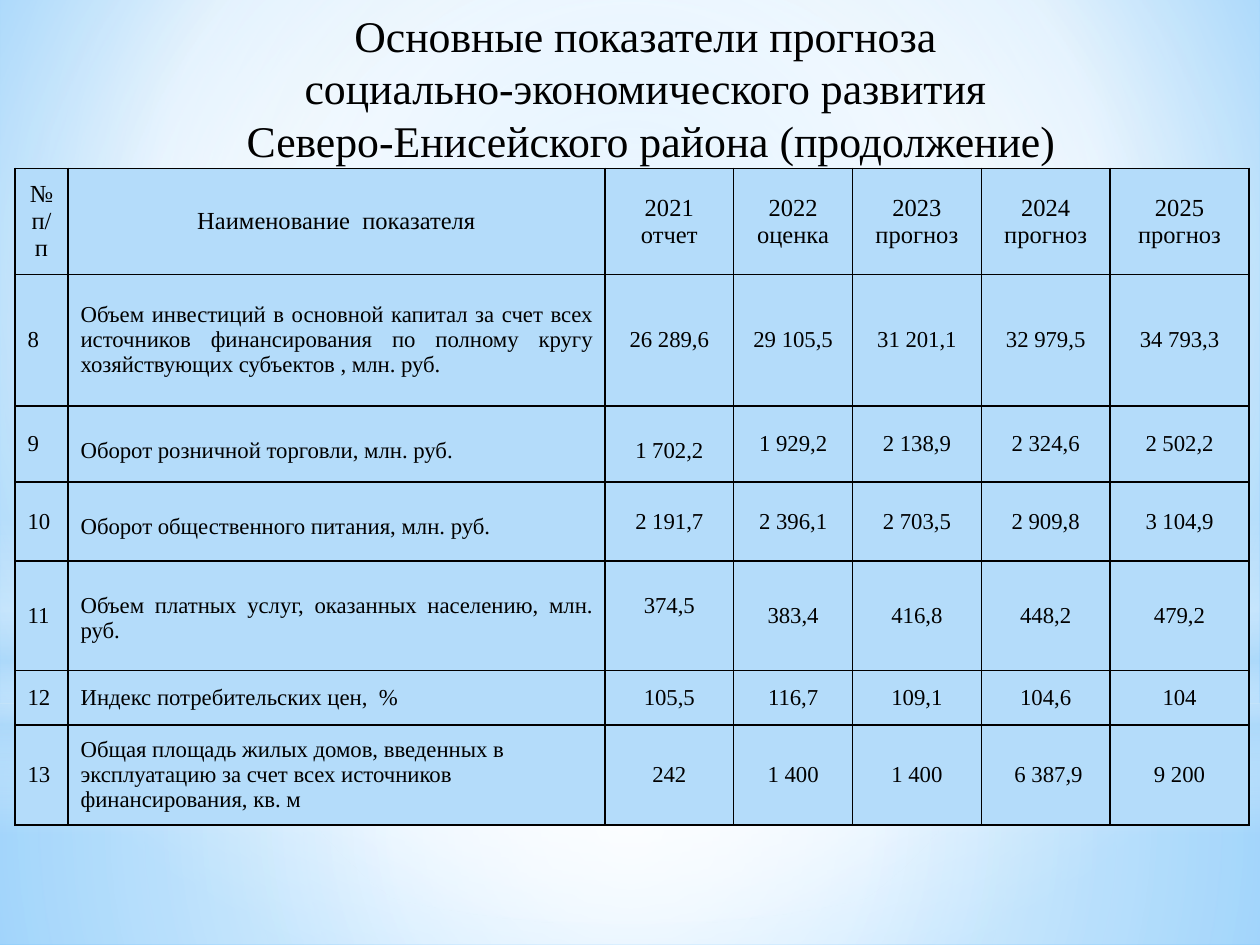
from lxml.etree import SubElement
from pptx import Presentation
from pptx.dml.color import RGBColor
from pptx.enum.shapes import MSO_SHAPE
from pptx.enum.text import MSO_ANCHOR, PP_ALIGN
from pptx.oxml.ns import qn
from pptx.util import Pt

FONT = "Times New Roman"
BLACK, WHITE, PALE_BLUE = "000000", "FFFFFF", "B4DCFA"
COLUMN_WIDTHS = [30.3, 306.8, 73.6, 67.9, 73.6, 73.6, 79.4]
ROW_HEIGHTS = [60.8, 74.9, 43.6, 45.2, 62.4, 31.3, 57]
MARGIN, LOWERED_MARGIN = 3.6, 18.6
CENTRE_FOCUS = (50, 50, 50, 50)
TITLE = [
    "Основные показатели прогноза ",
    "социально-экономического развития ",
    "Северо-Енисейского района (продолжение)",
]
HEADINGS = ["№ п/п", "Наименование  показателя", "2021 отчет", "2022 оценка",
            "2023 прогноз", "2024\nпрогноз", "2025 прогноз"]
INDICATORS = [
    ["8", "Объем инвестиций в основной капитал за счет всех источников финансирования "
     "по полному кругу хозяйствующих субъектов , млн. руб.",
     "26 289,6", "29 105,5", "31 201,1", "32 979,5", "34 793,3"],
    ["9", "Оборот розничной торговли, млн. руб.",
     "1 702,2", "1 929,2", "2 138,9", "2 324,6", "2 502,2"],
    ["10", "Оборот общественного питания, млн. руб.",
     "2 191,7", "2 396,1", "2 703,5", "2 909,8", "3 104,9"],
    ["11", "Объем платных услуг, оказанных населению, млн. руб.",
     "374,5", "383,4", "416,8", "448,2", "479,2"],
    ["12", "Индекс потребительских цен,  %",
     "105,5", "116,7", "109,1", "104,6", "104"],
    ["13", "Общая площадь жилых домов, введенных в эксплуатацию за счет всех источников "
     "финансирования, кв. м",
     "242", "1 400", "1 400", " 6 387,9", "9 200"],
]
JUSTIFIED = {"8", "11", "12"}
LOWERED = {("9", 1), ("9", 2), ("10", 1), ("11", 1), ("11", 2)}


def color(value):
    """Turn a hex string into a colour."""
    return RGBColor.from_string(value)


def write_text(frame, lines, size, align=PP_ALIGN.CENTER, line_spacing=None):
    """Fill a text frame with one formatted paragraph per line."""
    frame.word_wrap = True
    for index, line in enumerate(lines):
        paragraph = frame.add_paragraph() if index else frame.paragraphs[0]
        paragraph.alignment = align
        if line_spacing:
            paragraph.line_spacing = Pt(line_spacing)
        run = paragraph.add_run()
        run.text = line
        run.font.name = FONT
        run.font.size = Pt(size)
        run.font.bold = False
        run.font.color.rgb = color(BLACK)


def apply_gradient(properties, stops, focus=None, angle=90):
    """Replace a solid fill by a circular or linear gradient."""
    solid = properties.find(qn("a:solidFill"))
    gradient = properties.makeelement(qn("a:gradFill"), {"rotWithShape": "1"})
    properties.replace(solid, gradient)
    stop_list = SubElement(gradient, qn("a:gsLst"))
    for position, tint, opacity in stops:
        stop = SubElement(stop_list, qn("a:gs"), pos=str(position * 1000))
        tone = SubElement(stop, qn("a:srgbClr"), val=tint)
        if opacity < 100:
            SubElement(tone, qn("a:alpha"), val=str(opacity * 1000))
    if focus:
        circle = SubElement(gradient, qn("a:path"), {"path": "circle"})
        edges = {side: str(part * 1000) for side, part in zip("ltrb", focus)}
        SubElement(circle, qn("a:fillToRect"), edges)
    else:
        SubElement(gradient, qn("a:lin"), ang=str(angle * 60000), scaled="0")


def add_background(slide):
    """Give the slide its blue and white circular gradient."""
    slide.background.fill.solid()
    properties = slide.element.find(".//" + qn("p:bgPr"))
    stops = [(0, "9ED5FF", 100), (60, WHITE, 100), (100, "5BB9FF", 100)]
    apply_gradient(properties, stops, focus=(20, 10, 20, 60))


def add_glow(slide, top, height, stops, focus=CENTRE_FOCUS, outline=MSO_SHAPE.RECTANGLE):
    """Add a full-width translucent layer over the background."""
    glow = slide.shapes.add_shape(outline, Pt(0), Pt(top), Pt(720), Pt(height))
    glow.shadow.inherit = False
    glow.line.fill.background()
    glow.fill.solid()
    apply_gradient(glow.element.spPr, stops, focus)


def add_title(slide):
    """Place the title above the layers and format it."""
    title = slide.shapes.title
    slide.shapes.element.append(title.element)
    title.left, title.top, title.width, title.height = Pt(23.8), Pt(0), Pt(696.2), Pt(156)
    frame = title.text_frame
    frame.vertical_anchor = MSO_ANCHOR.TOP
    frame.margin_top = Pt(5)
    write_text(frame, TITLE, size=25, line_spacing=30)


def add_borders(cell):
    """Draw a thin black line on each side of a cell."""
    properties = cell._tc.get_or_add_tcPr()
    for index, side in enumerate(("lnL", "lnR", "lnT", "lnB")):
        border = properties.makeelement(qn("a:" + side), {"w": str(Pt(1))})
        fill = SubElement(border, qn("a:solidFill"))
        SubElement(fill, qn("a:srgbClr"), val=BLACK)
        properties.insert(index, border)


def fill_cell(cell, text, size, align=PP_ALIGN.CENTER, lowered=False):
    """Write, colour and frame one table cell."""
    write_text(cell.text_frame, text.split("\n"), size=size, align=align)
    cell.vertical_anchor = MSO_ANCHOR.TOP if lowered else MSO_ANCHOR.MIDDLE
    cell.margin_top = Pt(LOWERED_MARGIN if lowered else MARGIN)
    cell.fill.solid()
    cell.fill.fore_color.rgb = color(PALE_BLUE)
    add_borders(cell)


def add_indicators(slide):
    """Add the table of indicators by year."""
    table = slide.shapes.add_table(
        len(ROW_HEIGHTS), len(COLUMN_WIDTHS), Pt(8.6), Pt(96.2),
        Pt(sum(COLUMN_WIDTHS)), Pt(sum(ROW_HEIGHTS))).table
    table.first_row = table.horz_banding = False
    for column, width in zip(table.columns, COLUMN_WIDTHS):
        column.width = Pt(width)
    for row, height in zip(table.rows, ROW_HEIGHTS):
        row.height = Pt(height)
    for column, heading in enumerate(HEADINGS):
        fill_cell(table.cell(0, column), heading, size=14)
    for row, indicator in enumerate(INDICATORS, start=1):
        number = indicator[0]
        label_align = PP_ALIGN.JUSTIFY if number in JUSTIFIED else PP_ALIGN.LEFT
        for column, text in enumerate(indicator):
            fill_cell(table.cell(row, column), text, size=13,
                      align=label_align if column < 2 else PP_ALIGN.CENTER,
                      lowered=(number, column) in LOWERED)


def main():
    """Build and save the slide."""
    presentation = Presentation()
    presentation.slide_width, presentation.slide_height = Pt(720), Pt(540)
    slide = presentation.slides.add_slide(presentation.slide_layouts[5])
    add_background(slide)
    add_glow(slide, 401.8, 138.2, [(0, WHITE, 91), (37, WHITE, 76), (100, PALE_BLUE, 79)])
    add_glow(slide, 0, 401.8, [(0, WHITE, 89), (48, WHITE, 62), (100, PALE_BLUE, 79)])
    add_glow(slide, 296.6, 180, [(0, WHITE, 0), (29, WHITE, 30), (45, PALE_BLUE, 40),
                                 (55, WHITE, 26), (65, PALE_BLUE, 60), (100, WHITE, 0)],
             focus=None)
    add_glow(slide, 126, 401.8, [(0, WHITE, 100), (56, WHITE, 0)], outline=MSO_SHAPE.OVAL)
    add_title(slide)
    add_indicators(slide)
    presentation.save("out.pptx")


if __name__ == "__main__":
    main()
